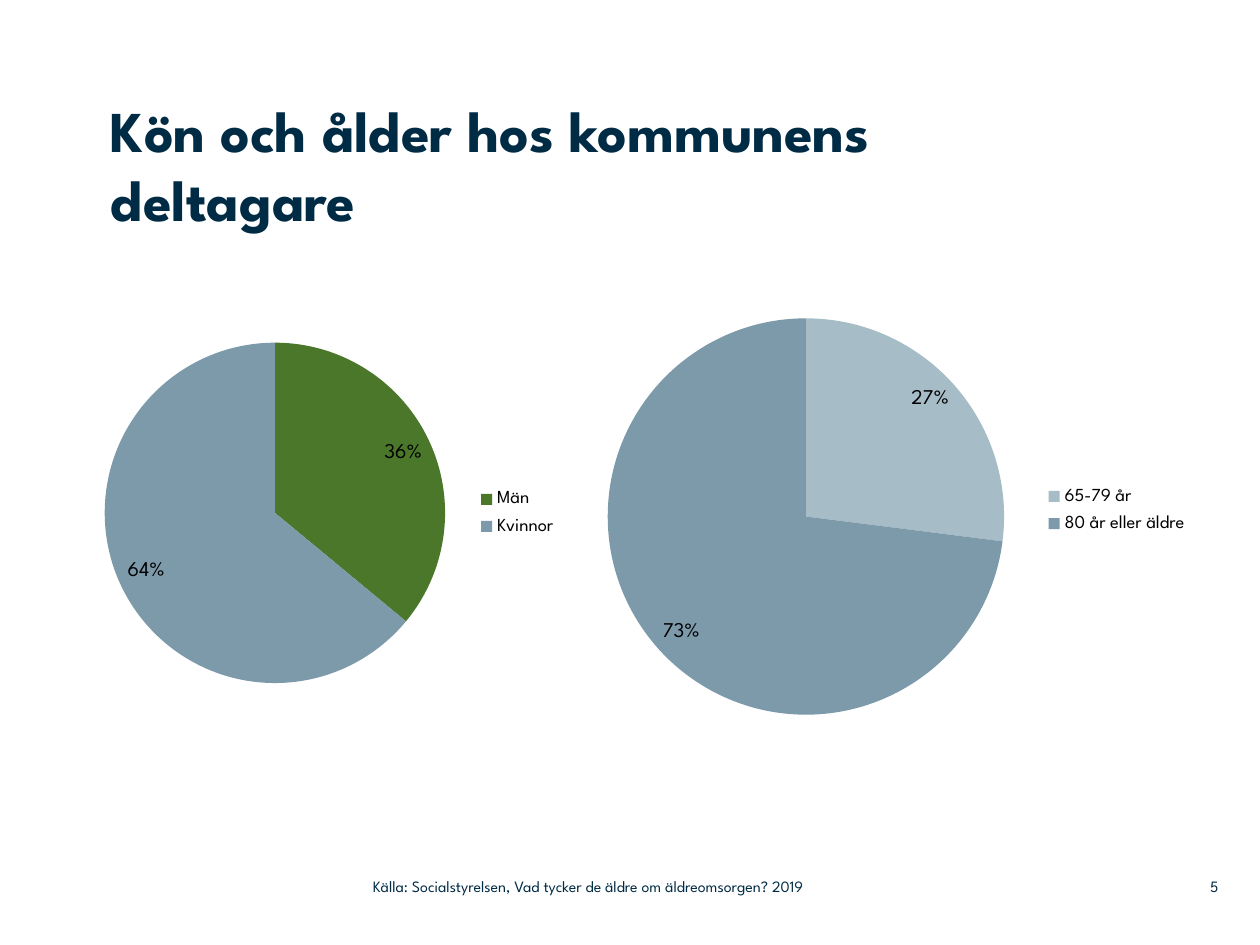
import pptx
import pptx.chart.data
import pptx.dml.color
import pptx.enum.chart
import pptx.enum.text
import pptx.oxml
import pptx.oxml.ns
import pptx.util

Pt = pptx.util.Pt
RGBColor = pptx.dml.color.RGBColor
Align = pptx.enum.text.PP_ALIGN
Anchor = pptx.enum.text.MSO_ANCHOR

FONT = "League Spartan"
NAVY = RGBColor(0x00, 0x2B, 0x45)
BLACK = RGBColor(0x00, 0x00, 0x00)
GREEN = RGBColor(0x4A, 0x77, 0x29)
BLUE = RGBColor(0x7D, 0x9A, 0xAA)
PALE_BLUE = RGBColor(0xA6, 0xBC, 0xC6)

# Content: places are left, top, width, height in points
TITLE = "Kön och ålder hos kommunens deltagare"
TITLE_PLACE = (63.36, 54, 547.2, 102.24)
FOOTERS = [
    ("Källa: Socialstyrelsen, Vad tycker de äldre om äldreomsorgen? 2019",
     (213.12, 496.08, 318.96, 20.88), Align.LEFT),
    ("5", (662.4, 496.08, 33.84, 20.88), Align.RIGHT),
]
# Plot area and legend are given as fractions of the chart: x, y, w, h
PIES = [
    {"place": (-16.56, 166.32, 390.24, 246.24),
     "plot": (0.19, 0.12, 0.51, 0.79), "legend": (0.73, 0.44, 0.14, 0.15),
     "slices": [("Män", 36, GREEN), ("Kvinnor", 64, BLUE)]},
    {"place": (310.32, 172.08, 390.24, 246.24),
     "plot": (0.09, 0.04, 0.59, 0.92), "legend": (0.72, 0.41, 0.24, 0.15),
     "slices": [("65-79 år", 27, PALE_BLUE), ("80 år eller äldre", 73, BLUE)]},
]


def in_points(place):
    return [Pt(length) for length in place]


def format_font(font, size, color=BLACK, bold=False):
    font.name, font.size, font.bold = FONT, Pt(size), bold
    font.color.rgb = color


def write_text(box, text, size=9, bold=False, align=Align.LEFT, anchor=Anchor.MIDDLE):
    frame = box.text_frame
    frame.word_wrap = True
    frame.auto_size = pptx.enum.text.MSO_AUTO_SIZE.NONE
    frame.vertical_anchor = anchor
    frame.margin_left = frame.margin_right = frame.margin_top = frame.margin_bottom = 0
    para = frame.paragraphs[0]
    para.alignment = align
    span = para.add_run()
    span.text = text
    format_font(span.font, size, NAVY, bold)


def set_layout(part, fractions, index, target=""):
    """Fix the place of a chart part; index is where its layout element belongs."""
    for old in part.findall(pptx.oxml.ns.qn("c:layout")):
        part.remove(old)
    sizes = "".join(f'<c:{key} val="{value}"/>' for key, value in zip("xywh", fractions))
    part.insert(index, pptx.oxml.parse_xml(
        f'<c:layout {pptx.oxml.ns.nsdecls("c")}><c:manualLayout>{target}'
        '<c:xMode val="edge"/><c:yMode val="edge"/>'
        f'{sizes}</c:manualLayout></c:layout>'))


def add_pie(page, place, plot, legend, slices):
    names, values, colors = zip(*slices)
    data = pptx.chart.data.CategoryChartData()
    data.categories = names
    data.add_series("Series 1", values)
    chart = page.shapes.add_chart(
        pptx.enum.chart.XL_CHART_TYPE.PIE, *in_points(place), data).chart
    chart.has_title = False
    format_font(chart.font, 10)
    pie = chart.plots[0]
    set_layout(pie._element.getparent(), plot, 0, '<c:layoutTarget val="inner"/>')

    chart.has_legend = True
    chart.legend.position = pptx.enum.chart.XL_LEGEND_POSITION.RIGHT
    chart.legend.include_in_layout = False
    format_font(chart.legend.font, 10.5)
    set_layout(chart.legend._element, legend, 1)

    pie.vary_by_categories = True
    for index, color in enumerate(colors):
        fill = pie.series[0].points[index].format.fill
        fill.solid()
        fill.fore_color.rgb = color

    labels = pie.series[0].data_labels
    labels.show_percentage = True
    labels.show_value = False
    labels.number_format = "0%"
    labels.number_format_is_linked = False
    labels.position = pptx.enum.chart.XL_LABEL_POSITION.INSIDE_END
    format_font(labels.font, 12)


def main():
    deck = pptx.Presentation()
    deck.slide_width, deck.slide_height = Pt(720), Pt(540)
    page = deck.slides.add_slide(deck.slide_layouts[5])

    # Footer
    for text, place, align in FOOTERS:
        write_text(page.shapes.add_textbox(*in_points(place)), text, align=align)

    # Title
    title = page.shapes.title
    title.left, title.top, title.width, title.height = in_points(TITLE_PLACE)
    write_text(title, TITLE, size=33, bold=True, anchor=Anchor.TOP)

    # Pie charts
    for pie in PIES:
        add_pie(page, **pie)

    deck.save("out.pptx")


if __name__ == "__main__":
    main()
